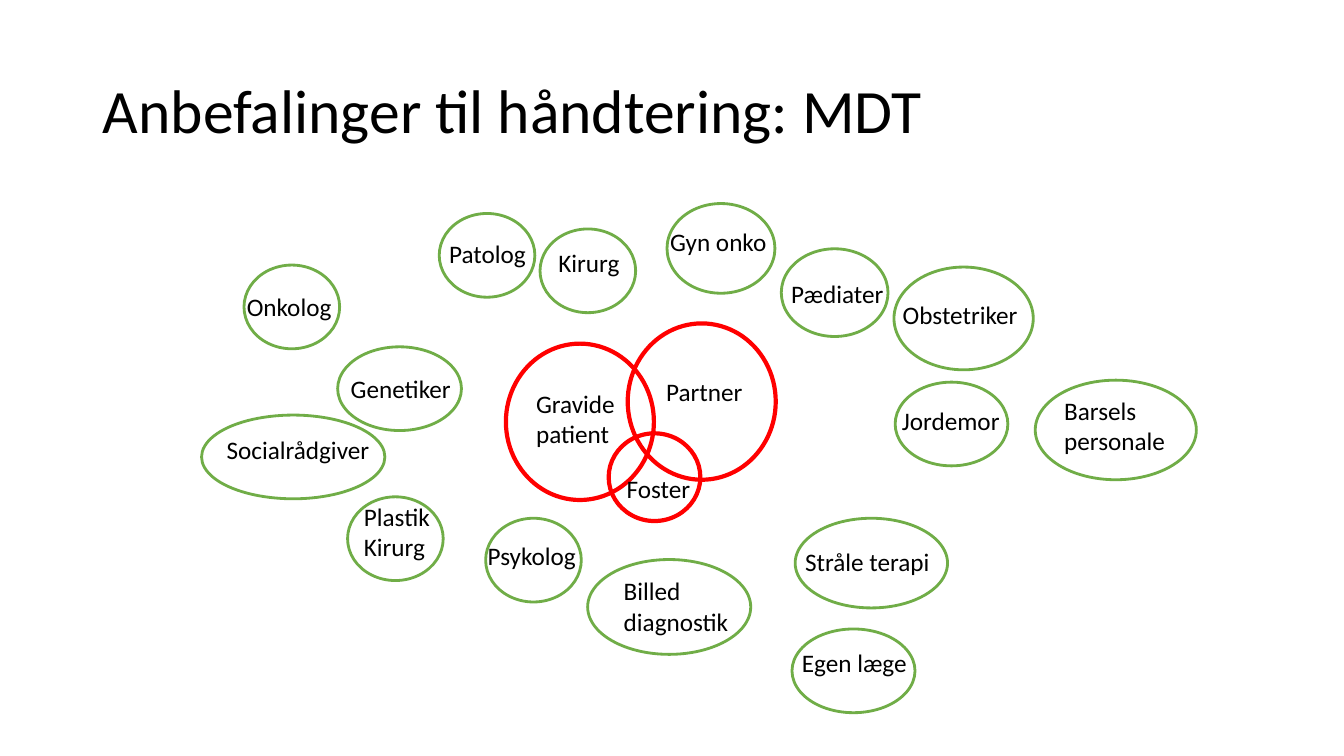
"""Build the slide on the multidisciplinary team around the pregnant patient."""
from dataclasses import dataclass

from pptx import Presentation
from pptx.dml.color import RGBColor
from pptx.enum import shapes, text
from pptx.util import Cm, Pt


@dataclass(frozen=True)
class Theme:
    font: str = "Calibri"
    ink: RGBColor = RGBColor(0, 0, 0)
    family: RGBColor = RGBColor(255, 0, 0)
    team: RGBColor = RGBColor(112, 173, 71)
    title_size: int = 44
    label_size: int = 18
    family_line: int = 3
    team_line: int = 2


THEME = Theme()
TITLE = "Anbefalinger til håndtering: MDT"
TITLE_AREA = (2.34, 1.02, 29.21, 3.68)
LINE_HEIGHT = 0.77
LABEL_PADDING = 0.25
SMALL = (2.41, 2.11)
ADULT = (3.73, 3.94)

# Each member: label lines, oval corner, oval size, label corner, label width (cm)
FAMILY = [
    (["Gravide", "patient"], (12.75, 8.66), ADULT, (13.26, 9.65), 2.67),
    (["Partner"], (15.82, 8.15), ADULT, (16.54, 9.35), 2.59),
    (["Foster"], (15.34, 10.92), (2.31, 2.21), (15.54, 11.79), 2.13),
]
TEAM = [
    (["Onkolog"], (6.15, 6.68), SMALL, (5.97, 7.21), 2.67),
    (["Genetiker"], (8.51, 8.74), (3.12, 2.11), (8.59, 9.27), 3.07),
    (["Socialrådgiver"], (5.08, 10.46), (4.62, 2.11), (5.46, 10.82), 4.14),
    (["Plastik", "Kirurg"], (8.76, 12.52), SMALL, (8.92, 12.5), 2.34),
    (["Patolog"], (11.07, 5.38), SMALL, (11.07, 5.87), 2.46),
    (["Kirurg"], (13.61, 5.77), SMALL, (13.82, 6.12), 2.08),
    (["Gyn onko"], (16.81, 5.13), (2.72, 2.26), (16.64, 5.59), 2.97),
    (["Pædiater"], (19.69, 6.27), (2.69, 2.21), (19.69, 6.88), 2.87),
    (["Obstetriker"], (22.53, 6.73), (3.51, 2.59), (22.5, 7.42), 3.43),
    (["Jordemor"], (22.56, 9.63), (2.84, 2.11), (22.48, 10.08), 3),
    (["Barsels", "personale"], (26.09, 9.58), (4.06, 2.51), (26.57, 9.83), 3.07),
    (["Psykolog"], (12.24, 13.06), SMALL, (12.04, 13.49), 2.74),
    (["Billed", "diagnostik"], (14.81, 14.1), (4.11, 2.39), (15.47, 14.38), 3.18),
    (["Stråle terapi"], (20.04, 13.06), (3.84, 2.26), (20.04, 13.64), 3.84),
    (["Egen læge"], (19.96, 15.85), (3.1, 2.11), (19.96, 16.18), 3.18),
]


def style(para, size):
    para.font.name = THEME.font
    para.font.size = Pt(size)
    para.font.color.rgb = THEME.ink
    para.alignment = text.PP_ALIGN.LEFT


def add_title(page):
    box = page.shapes.title
    box.left, box.top, box.width, box.height = map(Cm, TITLE_AREA)
    frame = box.text_frame
    frame.text = TITLE
    frame.auto_size = text.MSO_AUTO_SIZE.NONE
    frame.vertical_anchor = text.MSO_ANCHOR.MIDDLE
    para = frame.paragraphs[0]
    para.line_spacing = 0.9
    style(para, THEME.title_size)


def add_oval(page, corner, size, color, weight):
    oval = page.shapes.add_shape(
        shapes.MSO_SHAPE.OVAL, *map(Cm, corner + size))
    oval.shadow.inherit = False
    oval.fill.background()
    oval.line.color.rgb = color
    oval.line.width = Pt(weight)


def add_label(page, lines, corner, width):
    height = len(lines) * LINE_HEIGHT + LABEL_PADDING
    box = page.shapes.add_textbox(*map(Cm, corner + (width, height)))
    frame = box.text_frame
    frame.text = "\n".join(lines)
    frame.word_wrap = False
    frame.auto_size = text.MSO_AUTO_SIZE.SHAPE_TO_FIT_TEXT
    for para in frame.paragraphs:
        style(para, THEME.label_size)


def main():
    deck = Presentation()
    deck.slide_width, deck.slide_height = Cm(33.87), Cm(19.05)
    page = deck.slides.add_slide(deck.slide_layouts[5])
    add_title(page)
    for members, color, weight in (
        (TEAM, THEME.team, THEME.team_line),
        (FAMILY, THEME.family, THEME.family_line),
    ):
        for lines, oval_corner, oval_size, label_corner, label_width in members:
            add_oval(page, oval_corner, oval_size, color, weight)
            add_label(page, lines, label_corner, label_width)
    deck.save("out.pptx")


if __name__ == "__main__":
    main()
